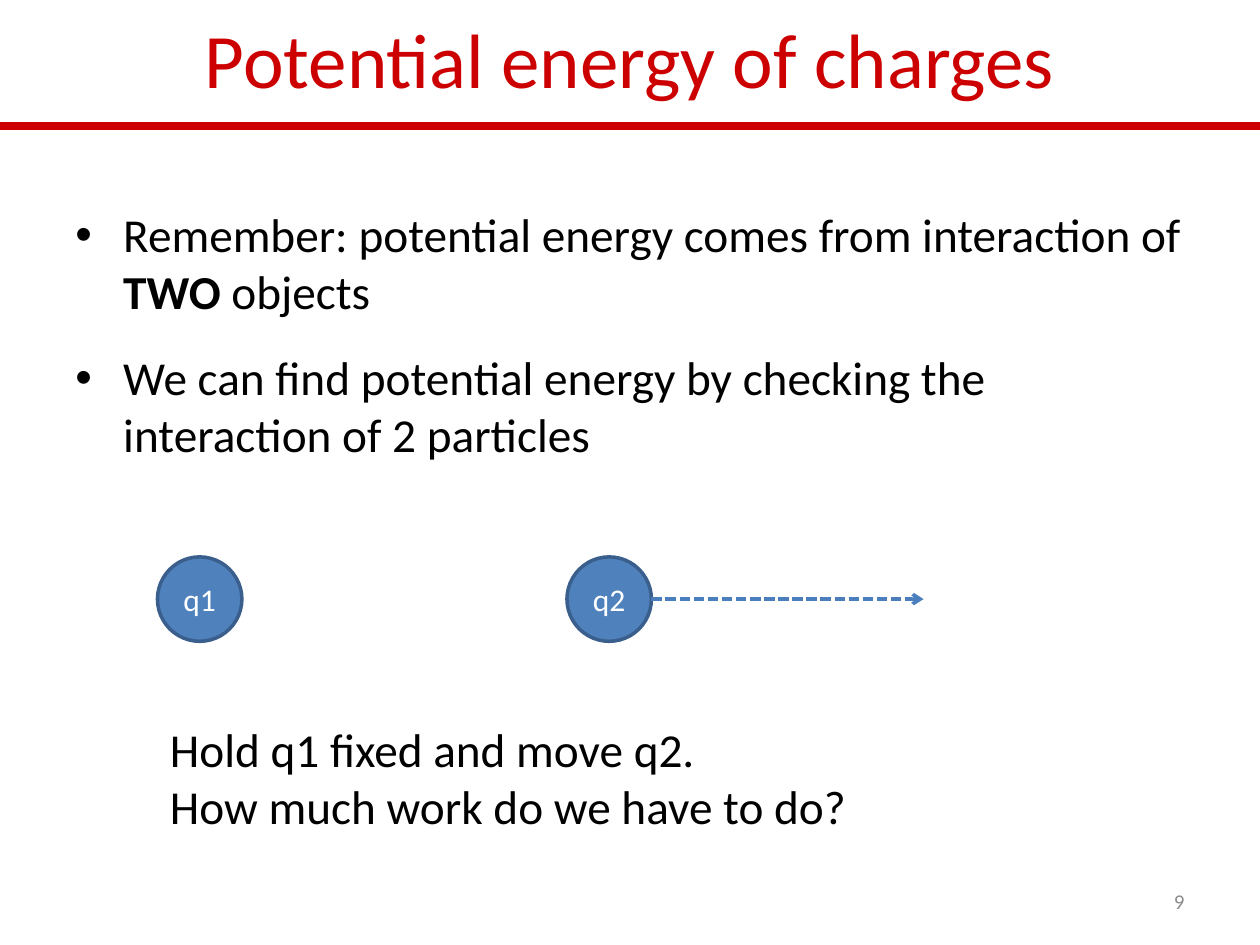
from lxml.etree import SubElement
from pptx import Presentation
from pptx.dml.color import RGBColor
from pptx.enum.dml import MSO_LINE
from pptx.enum.shapes import MSO_CONNECTOR, MSO_SHAPE
from pptx.enum.text import MSO_ANCHOR, PP_ALIGN
from pptx.oxml.ns import qn
from pptx.util import Inches, Pt

# Content: a paragraph is a list of (text, bold) runs
TITLE = [[("Potential energy of charges", False)]]
POINTS = [
    [("Remember: potential energy comes from interaction of ", False),
     ("TWO", True), (" objects", False)],
    [("We can find potential energy by checking the interaction of 2 particles", False)],
]
QUESTION = [[("Hold q1 fixed and move q2.", False)],
            [("How much work do we have to do?", False)]]
PAGE = [[("9", False)]]
CHARGES = {"q1": 1.25, "q2": 4.5}  # label: left edge

THEME = {
    "font": "Calibri",
    "red": "CC0000", "black": "000000", "white": "FFFFFF", "grey": "8C8C8C",
    "charge": "4F81BD", "outline": "3A5F8C", "arrow": "4B7EBC",
    "title": 44, "body": 27, "label": 18, "page": 12,
}
WIDTH, HEIGHT = 10, 7.5
MARGIN = WIDTH / 20
DIAMETER, CHARGE_TOP, ARROW_END = 0.67, 4.42, 7.33
INDENT = 0.38


def color(name):
    return RGBColor.from_string(THEME[name])


def write(frame, paragraphs, size, ink, align=PP_ALIGN.LEFT, anchor=MSO_ANCHOR.TOP):
    frame.word_wrap = True
    frame.vertical_anchor = anchor
    for i, runs in enumerate(paragraphs):
        paragraph = frame.paragraphs[0] if i == 0 else frame.add_paragraph()
        paragraph.alignment = align
        paragraph.font.name = THEME["font"]
        paragraph.font.size = Pt(THEME[size])
        paragraph.font.color.rgb = color(ink)
        for text, bold in runs:
            run = paragraph.add_run()
            run.text = text
            if bold:
                run.font.bold = True


def add_text(slide, box, *style):
    frame = slide.shapes.add_textbox(*map(Inches, box)).text_frame
    write(frame, *style)
    return frame


def add_bullet(paragraph):
    properties = paragraph._p.get_or_add_pPr()
    properties.set("marL", str(Inches(INDENT)))
    properties.set("indent", str(-Inches(INDENT)))
    SubElement(properties, qn("a:buFont")).set("typeface", "Arial")
    SubElement(properties, qn("a:buChar")).set("char", "•")


def add_line(slide, start, end, y, ink, weight):
    connector = slide.shapes.add_connector(
        MSO_CONNECTOR.STRAIGHT, *map(Inches, (start, y, end, y)))
    connector.line.color.rgb = color(ink)
    connector.line.width = Pt(weight)
    SubElement(connector._element.spPr, qn("a:effectLst"))
    return connector


def add_charge(slide, label, left):
    charge = slide.shapes.add_shape(
        MSO_SHAPE.OVAL, *map(Inches, (left, CHARGE_TOP, DIAMETER, DIAMETER)))
    charge.shadow.inherit = False
    charge.fill.solid()
    charge.fill.fore_color.rgb = color("charge")
    charge.line.color.rgb = color("outline")
    charge.line.width = Pt(2)
    frame = charge.text_frame
    frame.margin_left = frame.margin_right = 0
    write(frame, [[(label, False)]], "label", "white",
          PP_ALIGN.CENTER, MSO_ANCHOR.MIDDLE)


def main():
    deck = Presentation()
    deck.slide_width, deck.slide_height = Inches(WIDTH), Inches(HEIGHT)
    slide = deck.slides.add_slide(deck.slide_layouts[6])
    inner = WIDTH - 2 * MARGIN

    # Title and rule
    add_text(slide, (MARGIN, -0.17, inner, 1.25), TITLE, "title", "red",
             PP_ALIGN.CENTER, MSO_ANCHOR.MIDDLE)
    add_line(slide, 0, WIDTH, 1, "red", 5)

    # Bulleted points
    points = add_text(slide, (MARGIN, 1.58, inner, 4.95), POINTS, "body", "black")
    for i, paragraph in enumerate(points.paragraphs):
        paragraph.space_before = Pt(17 if i else 4)
        add_bullet(paragraph)

    # Two charges, the second one moving away
    for label, left in CHARGES.items():
        add_charge(slide, label, left)
    motion = add_line(slide, CHARGES["q2"] + DIAMETER, ARROW_END,
                      CHARGE_TOP + DIAMETER / 2, "arrow", 2)
    motion.line.dash_style = MSO_LINE.SQUARE_DOT
    SubElement(motion.line._get_or_add_ln(), qn("a:tailEnd")).set("type", "arrow")

    # Question and page number
    add_text(slide, (1.25, 5.67, 6.58, 1.01), QUESTION, "body", "black")
    add_text(slide, (WIDTH - MARGIN - 2.33, 6.95, 2.33, 0.4), PAGE, "page", "grey",
             PP_ALIGN.RIGHT, MSO_ANCHOR.MIDDLE)

    deck.save("out.pptx")


if __name__ == "__main__":
    main()
